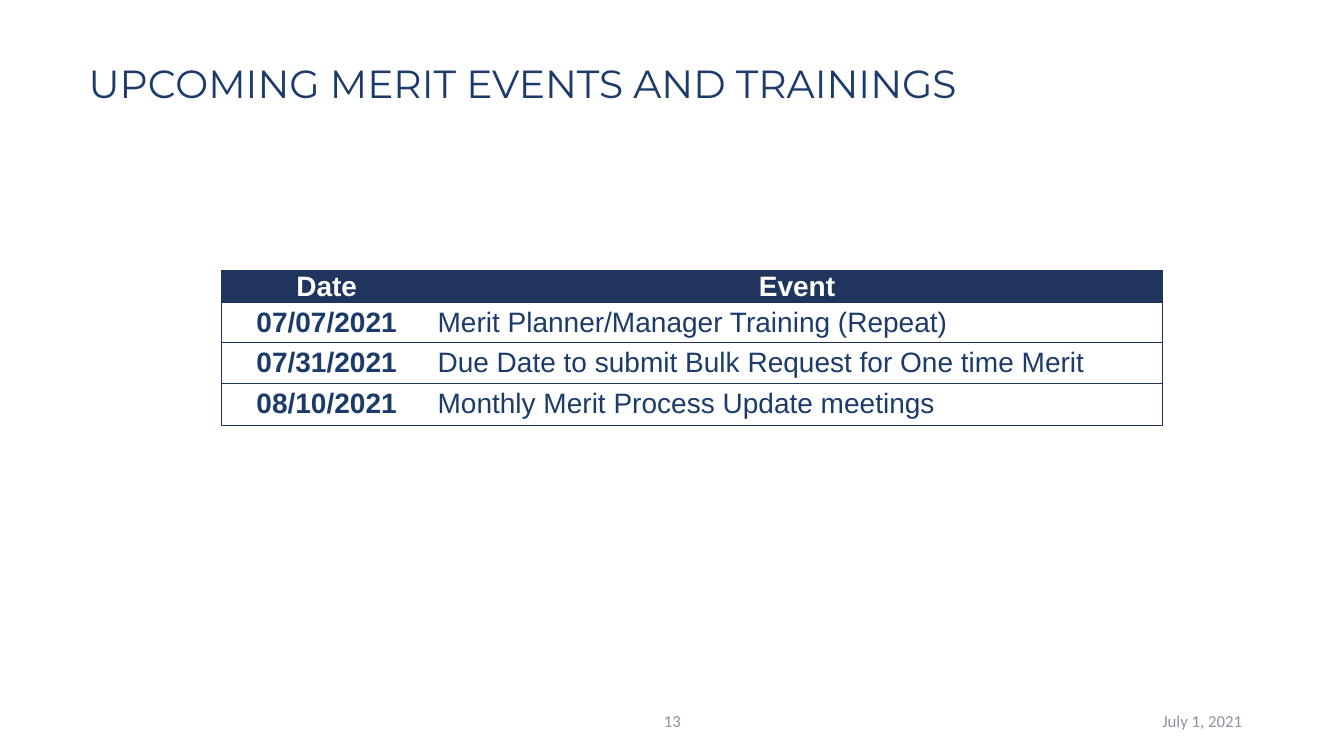
"""Build the slide that lists upcoming merit events and trainings."""
from dataclasses import dataclass

import lxml.etree
import pptx
import pptx.dml.color
import pptx.enum.text
import pptx.oxml.ns
import pptx.slide
import pptx.table
import pptx.text.text
import pptx.util

EMU_PER_PX = 9144
COLORS = {
    "navy": "1C3B6A",
    "header": "1F355E",
    "border": "1D335D",
    "white": "FFFFFF",
    "gray": "8D92A1",
}
ALIGN = pptx.enum.text.PP_ALIGN
ANCHOR = pptx.enum.text.MSO_ANCHOR
COLUMN_WIDTHS = (208, 725)
ROW_HEIGHTS = (32, 40, 40, 42)


@dataclass(frozen=True)
class Event:
    date: str
    name: str


@dataclass(frozen=True)
class FooterItem:
    text: str
    left: int
    align: ALIGN


@dataclass(frozen=True)
class Style:
    font: str
    size: int
    color: str
    bold: bool = False


EVENTS = (
    Event("07/07/2021", "Merit Planner/Manager Training (Repeat)"),
    Event("07/31/2021", "Due Date to submit Bulk Request for One time Merit"),
    Event("08/10/2021", "Monthly Merit Process Update meetings"),
)
FOOTER = (
    FooterItem("July 1, 2021", 942, ALIGN.RIGHT),
    FooterItem("13", 517, ALIGN.CENTER),
)


def px(length: int) -> pptx.util.Emu:
    return pptx.util.Emu(length * EMU_PER_PX)


def rgb(name: str) -> pptx.dml.color.RGBColor:
    return pptx.dml.color.RGBColor.from_string(COLORS[name])


def write(frame: pptx.text.text.TextFrame, text: str, style: Style, align: ALIGN) -> None:
    para = frame.paragraphs[0]
    para.alignment = align
    span = para.add_run()
    span.text = text
    span.font.name = style.font
    span.font.size = pptx.util.Pt(style.size)
    span.font.bold = style.bold
    span.font.color.rgb = rgb(style.color)


def set_borders(cell: pptx.table._Cell, drawn_sides: str) -> None:
    qn = pptx.oxml.ns.qn
    properties = cell._tc.get_or_add_tcPr()
    for side in "LRTB":
        line = lxml.etree.SubElement(properties, qn(f"a:ln{side}"), w=str(pptx.util.Pt(0.75)))
        if side in drawn_sides:
            fill = lxml.etree.SubElement(line, qn("a:solidFill"))
            lxml.etree.SubElement(fill, qn("a:srgbClr"), val=COLORS["border"])
        else:
            lxml.etree.SubElement(line, qn("a:noFill"))


def add_title(page: pptx.slide.Slide) -> None:
    title = page.shapes.title
    title.left, title.top, title.width, title.height = map(px, (88, 68, 1154, 43))
    frame = title.text_frame
    frame.auto_size = pptx.enum.text.MSO_AUTO_SIZE.NONE
    frame.vertical_anchor = ANCHOR.BOTTOM
    frame.margin_left = frame.margin_right = 0
    frame.margin_top = frame.margin_bottom = px(5)
    frame.paragraphs[0].line_spacing = 0.9
    write(frame, "UPCOMING MERIT EVENTS AND TRAININGS", Style("Montserrat", 28, "navy"), ALIGN.LEFT)


def add_events_table(page: pptx.slide.Slide) -> None:
    rows = (Event("Date", "Event"), *EVENTS)
    table = page.shapes.add_table(
        len(rows), len(COLUMN_WIDTHS), px(220), px(268), px(sum(COLUMN_WIDTHS)), px(sum(ROW_HEIGHTS))
    ).table
    table.horz_banding = False
    for column, width in zip(table.columns, COLUMN_WIDTHS):
        column.width = px(width)
    for row, height in zip(table.rows, ROW_HEIGHTS):
        row.height = px(height)
    for row_index, event in enumerate(rows):
        is_header = row_index == 0
        for column_index, text in enumerate((event.date, event.name)):
            is_date = column_index == 0
            cell = table.cell(row_index, column_index)
            cell.margin_left = cell.margin_right = px(6)
            cell.margin_top = cell.margin_bottom = 0
            cell.vertical_anchor = ANCHOR.MIDDLE
            set_borders(cell, "LTB" if is_date else "RTB")
            if is_header:
                cell.fill.solid()
                cell.fill.fore_color.rgb = rgb("header")
            else:
                cell.fill.background()
            style = Style("Arial", 20, "white" if is_header else "navy", is_header or is_date)
            write(cell.text_frame, text, style, ALIGN.CENTER if is_header or is_date else ALIGN.LEFT)


def add_footer_item(page: pptx.slide.Slide, item: FooterItem) -> None:
    box = page.shapes.add_textbox(px(item.left), px(695), px(300), px(40))
    frame = box.text_frame
    frame.word_wrap = True
    frame.vertical_anchor = ANCHOR.MIDDLE
    write(frame, item.text, Style("Calibri", 12, "gray"), item.align)


def main() -> None:
    deck = pptx.Presentation()
    deck.slide_width, deck.slide_height = px(1333), px(750)
    page = deck.slides.add_slide(deck.slide_layouts.get_by_name("Title Only"))
    add_title(page)
    add_events_table(page)
    for item in FOOTER:
        add_footer_item(page, item)
    deck.save("out.pptx")


if __name__ == "__main__":
    main()
